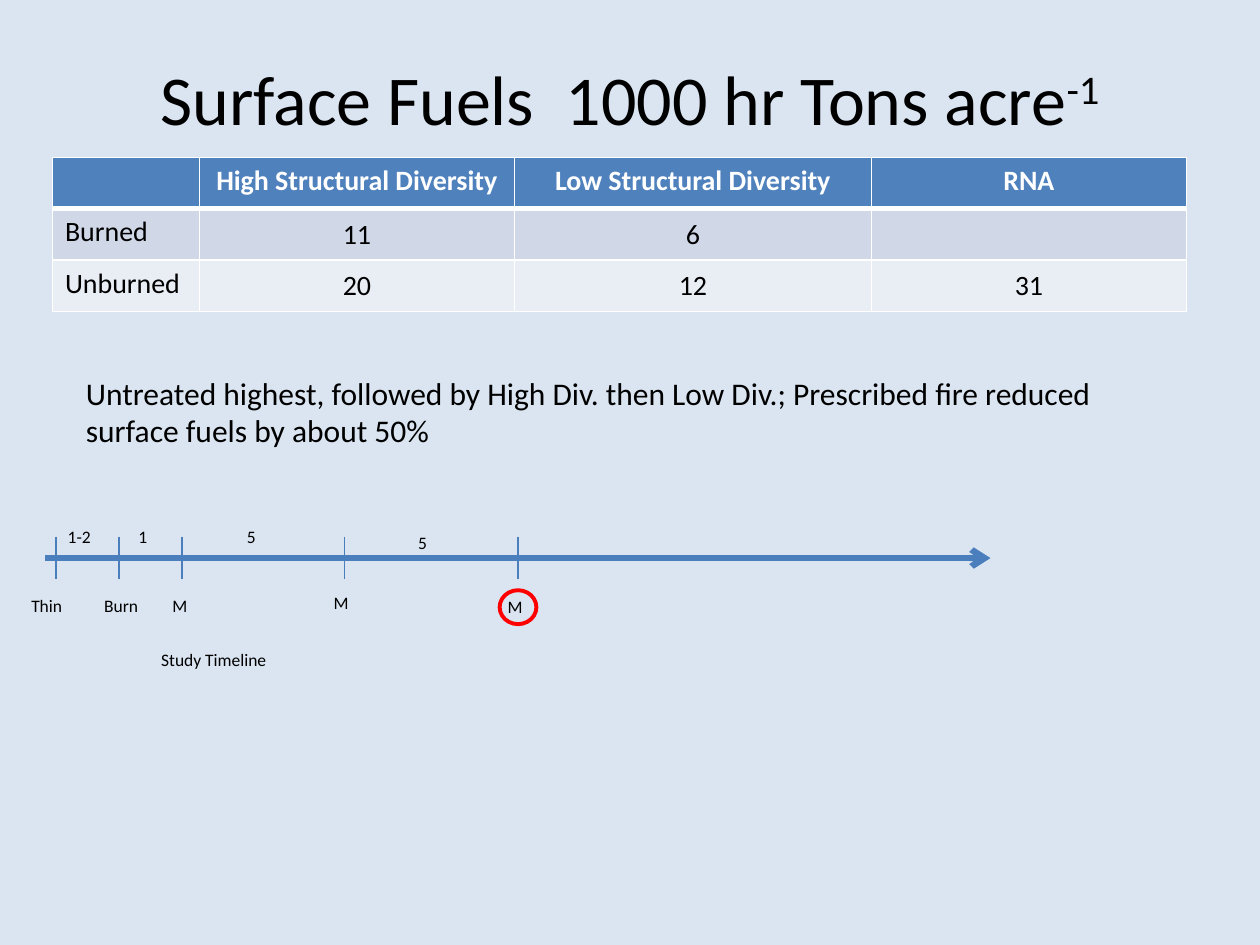
from collections import namedtuple
from dataclasses import dataclass

from lxml.etree import SubElement
from pptx import Presentation
from pptx.dml.color import RGBColor as Rgb
from pptx.enum.shapes import MSO_CONNECTOR as Connector, MSO_SHAPE as Shape
from pptx.enum.text import MSO_ANCHOR as Anchor, PP_ALIGN as Align
from pptx.oxml.ns import qn
from pptx.util import Pt

Box = namedtuple("Box", "left top width height")
Event = namedtuple("Event", "text tick_x label_x label_y width")
Interval = namedtuple("Interval", "text x y width")


@dataclass(frozen=True)
class Theme:
    font: str = "Calibri"
    background: Rgb = Rgb(0xDA, 0xE5, 0xF1)
    text: Rgb = Rgb(0, 0, 0)
    white: Rgb = Rgb(0xFF, 0xFF, 0xFF)
    header: Rgb = Rgb(0x4F, 0x81, 0xBD)
    bands: tuple = (Rgb(0xD0, 0xD8, 0xE8), Rgb(0xE9, 0xED, 0xF4))
    axis: Rgb = Rgb(0x4B, 0x7E, 0xBC)
    highlight: Rgb = Rgb(0xFF, 0, 0)
    title_size: int = 40
    note_size: int = 18
    table_size: int = 16
    label_size: int = 10


THEME = Theme()

FUELS = [
    ["", "High Structural Diversity", "Low Structural Diversity", "RNA"],
    ["Burned", "11", "6", ""],
    ["Unburned", "20", "12", "31"],
]
COLUMN_WIDTHS = [84, 180, 204, 180]

# Positions are relative to the timeline's box.
EVENTS = [
    Event("Thin", 6, -15.2, 39.2, 42),
    Event("Burn", 42, 26.5, 39.2, 42),
    Event("M", 78, 65.4, 39.2, 33),
    Event("M", 170.8, 157.5, 37.5, 26),
    Event("M", 270, 257, 40, 26),
]
INTERVALS = [
    Interval("1-2", 5.6, 0, 30),
    Interval("1", 46, 0, 26),
    Interval("5", 108, 0, 26),
    Interval("5", 205.9, 3.3, 26),
]


def add_run(paragraph, text, size, color=THEME.text, bold=False):
    run = paragraph.add_run()
    run.text = text
    run.font.name, run.font.size, run.font.bold = THEME.font, Pt(size), bold
    run.font.color.rgb = color
    return run


def add_text(slide, box, text, size):
    frame = slide.shapes.add_textbox(*map(Pt, box)).text_frame
    frame.word_wrap = True
    add_run(frame.paragraphs[0], text, size)
    return frame


def add_line(slide, start, end, weight):
    line = slide.shapes.add_connector(Connector.STRAIGHT, *map(Pt, start + end))
    line.line.color.rgb = THEME.axis
    line.line.width = Pt(weight)
    SubElement(line._element.spPr, qn("a:effectLst"))
    return line


def set_borders(cell, **weights):
    """Draw white borders; the keys are the sides L, R, T and B in that order."""
    properties = cell._tc.get_or_add_tcPr()
    for side, weight in weights.items():
        border = SubElement(properties, qn(f"a:ln{side}"), w=str(Pt(weight)))
        fill = SubElement(border, qn("a:solidFill"))
        SubElement(fill, qn("a:srgbClr"), val=str(THEME.white))


def add_title(slide, box):
    frame = add_text(slide, box, "Surface Fuels  1000 hr Tons acre", THEME.title_size)
    frame.vertical_anchor = Anchor.MIDDLE
    paragraph = frame.paragraphs[0]
    paragraph.alignment = Align.CENTER
    exponent = add_run(paragraph, "-1", THEME.title_size)
    exponent._r.get_or_add_rPr().set("baseline", "30000")


def style_cell(cell, text, row, column):
    is_header, is_value = row == 0, row > 0 and column > 0
    set_borders(cell, L=1, R=1, T=3 if row == 1 else 1, B=3 if is_header else 1)
    cell.fill.solid()
    cell.fill.fore_color.rgb = THEME.header if is_header else THEME.bands[(row - 1) % 2]
    if is_value:
        cell.vertical_anchor = Anchor.MIDDLE
        cell.margin_left = cell.margin_right = cell.margin_top = Pt(0.75)
        cell.margin_bottom = Pt(0)
    paragraph = cell.text_frame.paragraphs[0]
    if is_header or is_value:
        paragraph.alignment = Align.CENTER
    if text:
        color = THEME.white if is_header else THEME.text
        add_run(paragraph, text, THEME.table_size, color, is_header)


def add_fuels_table(slide, box):
    table = slide.shapes.add_table(len(FUELS), len(COLUMN_WIDTHS), *map(Pt, box)).table
    for column, width in zip(table.columns, COLUMN_WIDTHS):
        column.width = Pt(width)
    for r, values in enumerate(FUELS):
        table.rows[r].height = Pt(box.height / len(FUELS))
        for c, text in enumerate(values):
            style_cell(table.cell(r, c), text, r, c)


def add_timeline(slide, box):
    axis_y, half_tick, label_height = box.top + 21.6, 12.2, 19.4
    axis = add_line(slide, (box.left, axis_y), (box.left + box.width, axis_y), 3.5)
    SubElement(axis.line._get_or_add_ln(), qn("a:tailEnd"), type="arrow")

    for event in EVENTS:
        x = box.left + event.tick_x
        add_line(slide, (x, axis_y - half_tick), (x, axis_y + half_tick), 0.75)
    labels = [(e.text, e.label_x, e.label_y, e.width) for e in EVENTS] + INTERVALS
    caption = ("Study Timeline", 59, box.height - label_height, 101.5)
    for text, x, y, width in [*labels, caption]:
        label_box = Box(box.left + x, box.top + y, width, label_height)
        add_text(slide, label_box, text, THEME.label_size)

    latest = EVENTS[-1]
    ring_width = 21
    ring_box = Box(box.left + latest.tick_x - ring_width / 2,
                   box.top + latest.label_y, ring_width, label_height)
    ring = slide.shapes.add_shape(Shape.OVAL, *map(Pt, ring_box))
    ring.shadow.inherit = False
    ring.fill.background()
    ring.line.color.rgb = THEME.highlight
    ring.line.width = Pt(2.25)


def main():
    deck = Presentation()
    deck.slide_width, deck.slide_height = Pt(720), Pt(540)
    slide = deck.slides.add_slide(deck.slide_layouts[6])
    slide.background.fill.solid()
    slide.background.fill.fore_color.rgb = THEME.background

    add_title(slide, Box(36, 21.6, 648, 68.4))
    add_fuels_table(slide, Box(30, 90, 648, 88))
    add_text(slide, Box(42, 210, 630, 51),
             "Untreated highest, followed by High Div. then Low Div.; "
             "Prescribed fire reduced surface fuels by about 50%", THEME.note_size)
    add_timeline(slide, Box(26, 297.3, 540, 89.3))
    deck.save("out.pptx")


if __name__ == "__main__":
    main()
